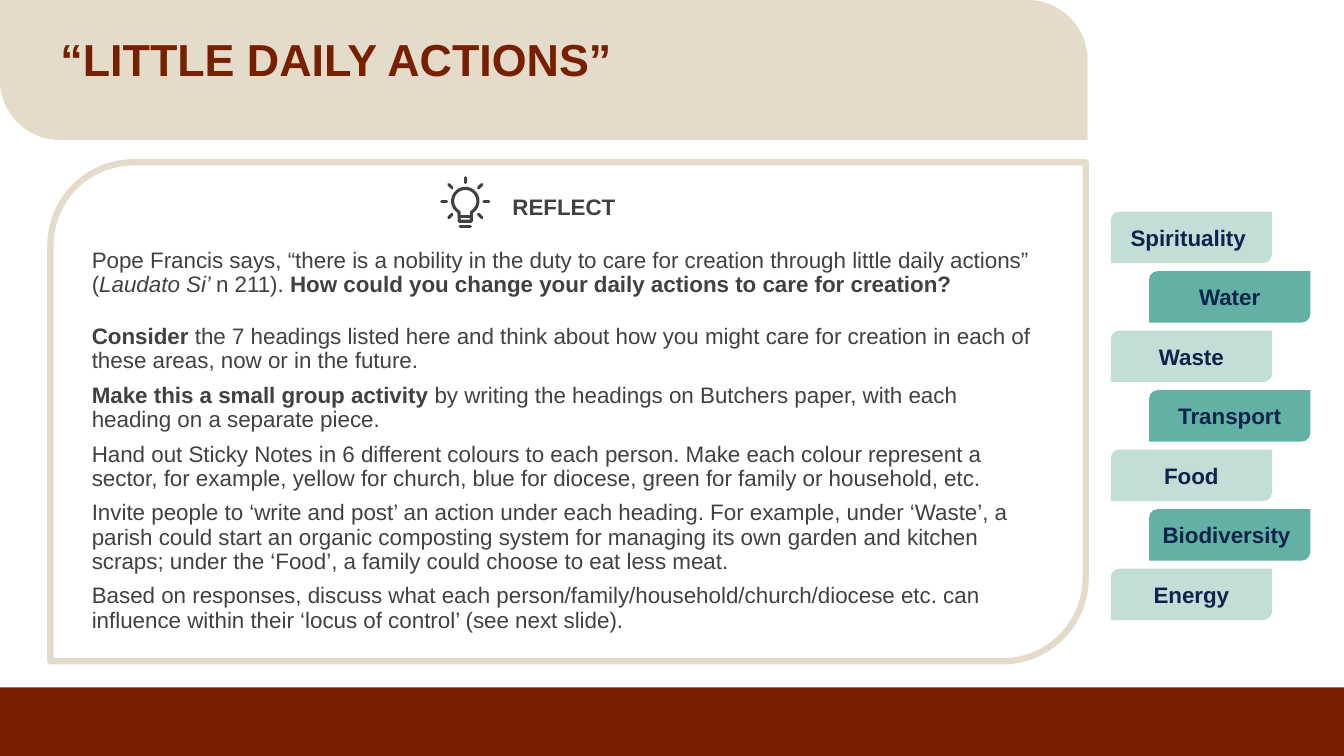
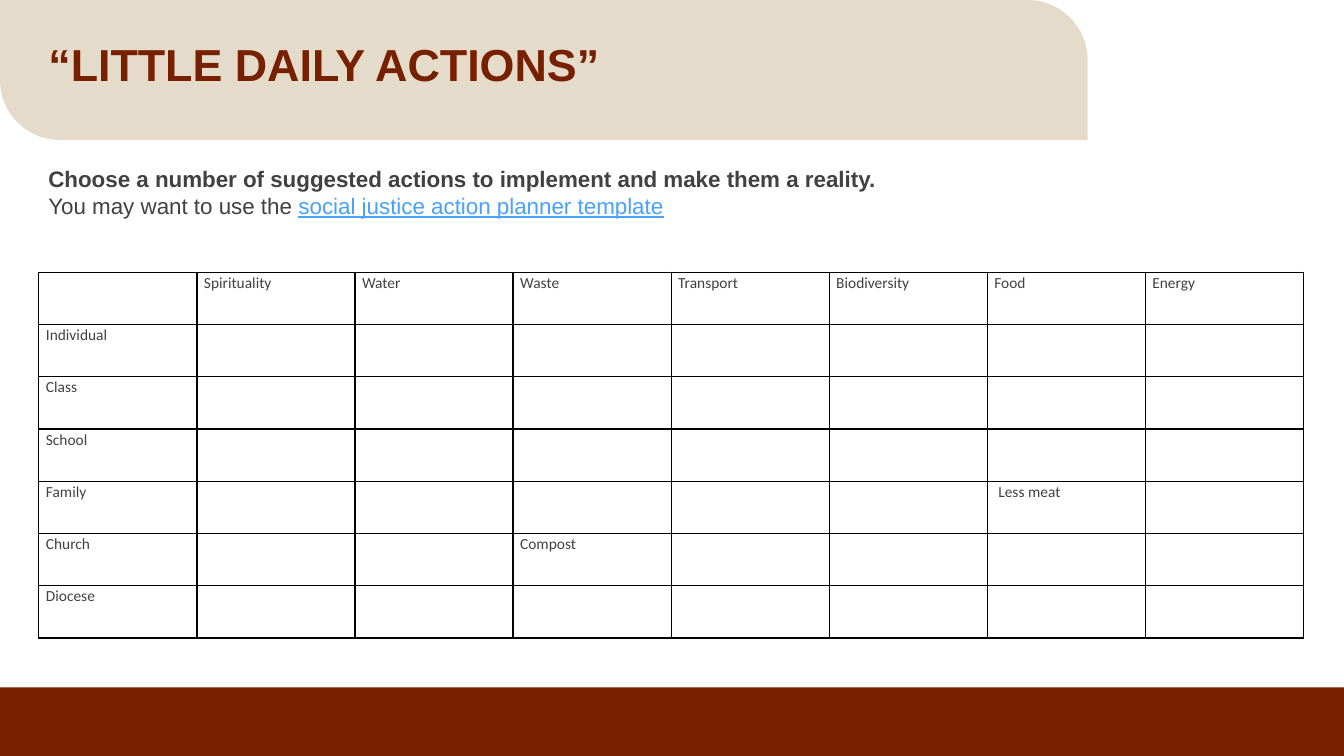
from itertools import cycle
from math import cos, radians, sin

from pptx import Presentation
from pptx.dml.color import RGBColor
from pptx.enum.shapes import MSO_CONNECTOR, MSO_SHAPE
from pptx.enum.text import MSO_ANCHOR, MSO_AUTO_SIZE, PP_ALIGN
from pptx.oxml.ns import qn
from pptx.util import Inches, Pt
from lxml.etree import SubElement

WIDTH, HEIGHT = Inches(13.333), Inches(7.5)
MAROON, SAND, INK, NAVY = "762000", "E5DBCB", "414042", "0C244C"
MINT, TEAL, LINK, BLACK = "C3DDD7", "63B1A4", "48A1FA", "000000"
TITLE = "“LITTLE DAILY ACTIONS”"
HEADINGS = ["Spirituality ", "Water", "Waste", "Transport", "Food", "Biodiversity ", "Energy"]
TABLE_COLUMNS = ["Spirituality", "Water", "Waste", "Transport", "Biodiversity", "Food", "Energy"]
TABLE_ROWS = ["Individual", "Class", "School", "Family", "Church", "Diocese"]
ACTIONS = {("Family", "Food"): "Less meat", ("Church", "Waste"): "Compost"}
REFLECTION = [
    (0, [("REFLECT ", "b")]),
    (20, [
        ("Pope Francis says, “there is a nobility in the duty to care for creation "
         "through little daily actions” (", ""),
        ("Laudato Si’ ", "i"),
        ("n 211). ", ""),
        ("How could you change your daily actions to care for creation?", "b"),
    ]),
    (20, [
        ("Consider ", "b"),
        ("the 7 headings listed here and think about how you might care for creation "
         "in each of these areas, now or in the future.", ""),
    ]),
    (7.5, [
        ("Make this a small group activity", "b"),
        (" by writing the headings on Butchers paper, with each heading on a separate piece.", ""),
    ]),
    (7.5, [
        ("Hand out Sticky Notes in 6 different colours to each person. Make each colour "
         "represent a sector, for example, yellow for church, blue for diocese, green for "
         "family or household, etc.", ""),
    ]),
    (7.5, [
        ("Invite people to ‘write and post’ an action under each heading. For example, under "
         "‘Waste’, a parish could start an organic composting system for managing its own "
         "garden and kitchen scraps; under the ‘Food’, a family could choose to eat less meat.", ""),
    ]),
    (7.5, [
        ("Based on responses, discuss what each person/family/household/church/diocese etc. "
         "can influence within their ‘locus of control’ (see next slide).", ""),
    ]),
]
INTRODUCTION = [
    (0, [("Choose a number of suggested actions to implement and make them a reality.", "b")]),
    (0, [("You may want to use the ", ""), ("social justice action planner template", "u")]),
]


def color(value):
    """Turn a hex string into a colour."""
    return RGBColor.from_string(value)


def across(percent):
    """Give a share of the slide's width."""
    return round(WIDTH * percent / 100)


def down(percent):
    """Give a share of the slide's height."""
    return round(HEIGHT * percent / 100)


def box(left, top, width, height):
    """Give a rectangle in percent of the slide."""
    return across(left), down(top), across(width), down(height)


def add_run(paragraph, text, size, ink, style="", font="Arial"):
    """Add one formatted run; style holds b, i or u."""
    run = paragraph.add_run()
    run.text = text
    run.font.name, run.font.size = font, Pt(size)
    run.font.bold, run.font.italic = "b" in style, "i" in style
    run.font.underline = "u" in style
    run.font.color.rgb = color(ink)


def add_panel(shapes, area, fill=None, line=None, corners=None):
    """Add a rectangle with two opposite corners rounded."""
    shape = shapes.add_shape(MSO_SHAPE.ROUND_2_DIAG_RECTANGLE, *area)
    shape.shadow.inherit = False
    for index, value in enumerate(corners or ()):
        shape.adjustments[index] = value
    if fill:
        shape.fill.solid()
        shape.fill.fore_color.rgb = color(fill)
    else:
        shape.fill.background()
    if line:
        shape.line.color.rgb = color(line)
        shape.line.width = Pt(4.5)
    else:
        shape.line.fill.background()
    return shape


def add_master_bands(presentation, slide):
    """Put the title band and the footer band on the master."""
    bands = [
        add_panel(slide.shapes, box(0, 90.93, 100, 9.07), MAROON, corners=(0, 0)),
        add_panel(slide.shapes, box(0, 0, 80.93, 18.53), SAND, corners=(0, 0.43)),
    ]
    for number, band in enumerate(bands, 101):
        band.element.nvSpPr.cNvPr.set("id", str(number))
        presentation.slide_master.shapes.element.append(band.element)


def prepare_placeholder(placeholder, area):
    """Move a placeholder and anchor its text at the top."""
    placeholder.left, placeholder.top, placeholder.width, placeholder.height = area
    frame = placeholder.text_frame
    frame.word_wrap, frame.auto_size = True, MSO_AUTO_SIZE.NONE
    frame.vertical_anchor = MSO_ANCHOR.TOP
    return frame


def fill_title(slide, left, top):
    """Write the shared title."""
    frame = prepare_placeholder(slide.shapes.title, box(left, top, 74.55, 11.6))
    paragraph = frame.paragraphs[0]
    paragraph.alignment, paragraph.line_spacing = PP_ALIGN.LEFT, 0.9
    add_run(paragraph, TITLE, 32, MAROON, "b")


def fill_body(slide, area, content, spacing):
    """Write paragraphs without bullets in the body placeholder."""
    frame = prepare_placeholder(slide.placeholders[1], area)
    for index, (space, runs) in enumerate(content):
        paragraph = frame.add_paragraph() if index else frame.paragraphs[0]
        properties = paragraph._p.get_or_add_pPr()
        properties.set("marL", "0")
        properties.set("indent", "0")
        SubElement(properties, qn("a:buNone"))
        paragraph.space_before, paragraph.line_spacing = Pt(space), spacing
        for text, style in runs:
            add_run(paragraph, text, 16, LINK if "u" in style else INK, style)
    return frame


def add_heading_tabs(slide):
    """Stack the headings in two staggered columns."""
    for index, (heading, (left, fill)) in enumerate(
        zip(HEADINGS, cycle([(82.65, MINT), (85.5, TEAL)]))
    ):
        tab = add_panel(slide.shapes, box(left, 28 + 7.87 * index, 12, 6.8), fill)
        frame = tab.text_frame
        frame.vertical_anchor = MSO_ANCHOR.MIDDLE
        frame.paragraphs[0].alignment = PP_ALIGN.CENTER
        add_run(frame.paragraphs[0], heading, 16, NAVY, "b")


def style_stroke(shape):
    """Give an icon line its colour, width and round ends."""
    shape.line.color.rgb = color(INK)
    shape.line.width = Pt(2.2)
    properties = shape.element.spPr
    properties.find(qn("a:ln")).set("cap", "rnd")
    if properties.find(qn("a:effectLst")) is None:
        SubElement(properties, qn("a:effectLst"))


def add_bulb(slide, left, top):
    """Draw a shining light bulb around a centre."""
    group = slide.shapes.add_group_shape()

    def point(x, y):
        return across(left + x), down(top) + across(y)

    def polar(radius, angle):
        return radius * cos(radians(angle)), radius * sin(radians(angle))

    outline = [polar(0.94, angle) for angle in range(120, 421, 10)]
    outline += [(0.45, 1.5), (-0.45, 1.5)]
    points = [point(*position) for position in outline]
    builder = group.shapes.build_freeform(*points[0], scale=1.0)
    builder.add_line_segments(points[1:], close=True)
    glass = builder.convert_to_shape()
    glass.fill.background()
    style_stroke(glass)
    strokes = [((-0.45, 1.16), (0.45, 1.16)), ((-0.38, 1.88), (0.38, 1.88))]
    strokes += [(polar(1.38, angle), polar(1.75, angle)) for angle in range(135, 406, 45)]
    for start, end in strokes:
        style_stroke(group.shapes.add_connector(
            MSO_CONNECTOR.STRAIGHT, *point(*start), *point(*end)))


def format_cell(cell):
    """Clear a cell's fill and rule its four sides."""
    properties = cell._tc.get_or_add_tcPr()
    for side in ("lnL", "lnR", "lnT", "lnB"):
        line = SubElement(properties, qn(f"a:{side}"), w=str(Pt(1)))
        fill = SubElement(line, qn("a:solidFill"))
        SubElement(fill, qn("a:srgbClr"), val=BLACK)
    cell.fill.background()
    cell.margin_left = cell.margin_right = Inches(0.07)
    cell.margin_top = cell.margin_bottom = 0


def add_planner(slide, area):
    """Add the table of groups and headings."""
    rows, columns = ["", *TABLE_ROWS], ["", *TABLE_COLUMNS]
    table = slide.shapes.add_table(len(rows), len(columns), *area).table
    table.first_row = table.horz_banding = False
    for row_index, row in enumerate(rows):
        for column_index, column in enumerate(columns):
            cell = table.cell(row_index, column_index)
            format_cell(cell)
            action = ACTIONS.get((row, column), "")
            text = action if row and column else row or column
            if action == "Less meat":
                cell.margin_left = Inches(0.11)
            if text:
                paragraph = cell.text_frame.paragraphs[0]
                paragraph.line_spacing = 1.07
                add_run(paragraph, text, 11, INK, font="Calibri")


def build_reflection(slide):
    """Build the reflection slide."""
    fill_title(slide, 3.75, 4.27)
    frame = fill_body(slide, box(6.08, 25.33, 72.23, 60.67), REFLECTION, 0.9)
    frame.paragraphs[0].alignment = PP_ALIGN.CENTER
    add_heading_tabs(slide)
    add_panel(slide.shapes, box(3.75, 21.47, 77.03, 66), line=SAND)
    add_bulb(slide, 34.62, 26.6)


def build_planner(slide):
    """Build the action planner slide."""
    fill_title(slide, 2.85, 4.93)
    fill_body(slide, box(2.85, 21.2, 94.13, 8.53), INTRODUCTION, 1.0)
    add_planner(slide, box(2.89, 36, 94.1, 48.4))


def main():
    """Build and save the presentation."""
    presentation = Presentation()
    presentation.slide_width, presentation.slide_height = WIDTH, HEIGHT
    layout = presentation.slide_layouts[1]
    reflection, planner = (presentation.slides.add_slide(layout) for _ in range(2))
    add_master_bands(presentation, reflection)
    build_reflection(reflection)
    build_planner(planner)
    presentation.save("out.pptx")


if __name__ == "__main__":
    main()
